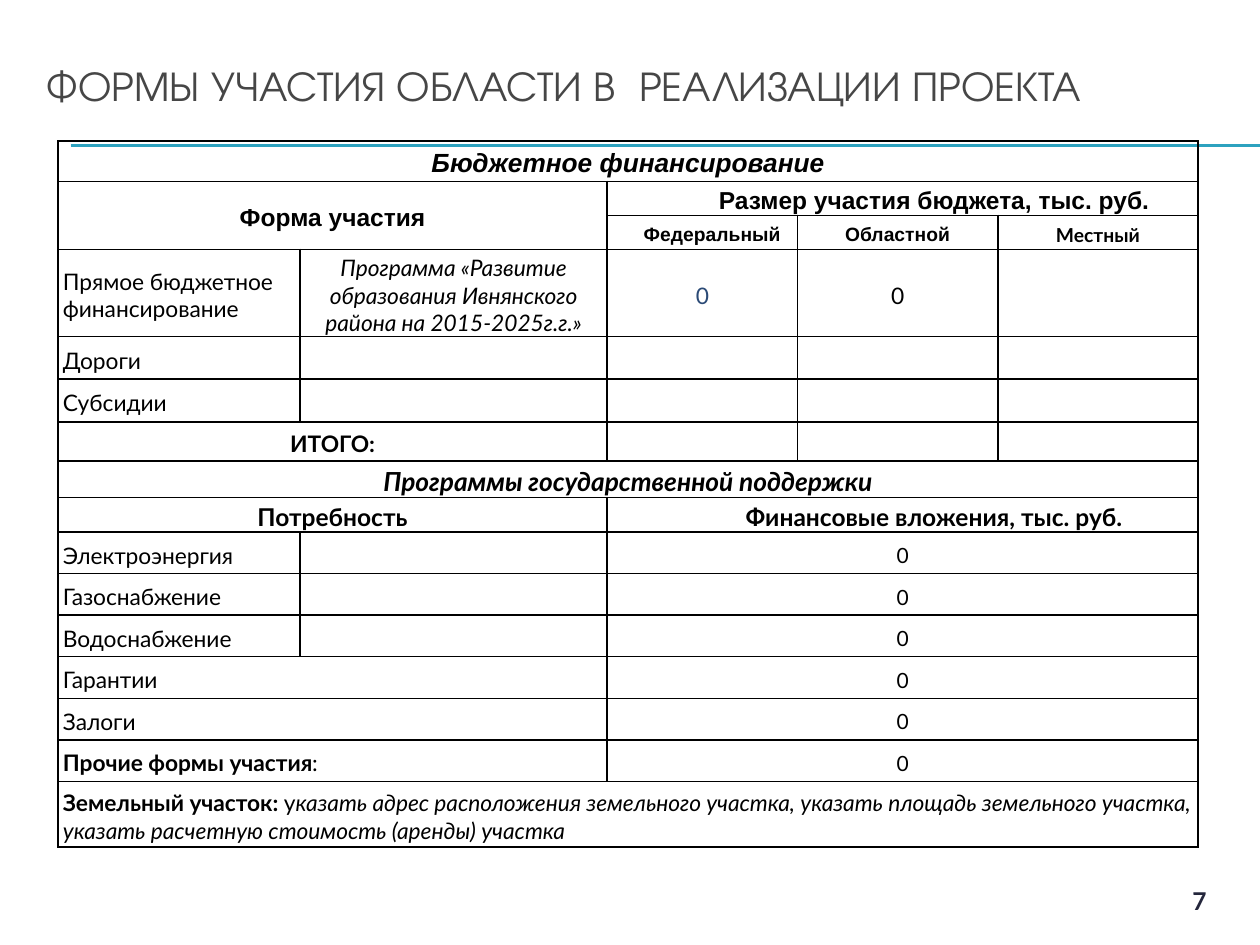
"""Build the slide on the forms of regional participation in the project."""
from lxml.etree import SubElement
from pptx import Presentation
from pptx.dml.color import RGBColor
from pptx.enum.shapes import MSO_CONNECTOR
from pptx.enum.text import MSO_ANCHOR, MSO_AUTO_SIZE, PP_ALIGN
from pptx.oxml import parse_xml
from pptx.oxml.ns import nsdecls, qn
from pptx.util import Inches, Pt

THEME = {
    "ink": "000000", "title": "464646", "rule": "2DA2BF", "federal": "2B4A76", "number": "24263C",
    "title_font": "TeX Gyre Adventor", "heading_font": "Arial", "body_font": "Lato",
    "title_size": 24, "section_size": 15, "heading_size": 14, "body_size": 13,
    "value_size": 12, "level_size": 11,
}
BODY = {"size": THEME["body_size"], "name": THEME["body_font"], "color": THEME["ink"],
        "bold": False, "italic": False}
BOLD = BODY | {"bold": True}
ITALIC = BODY | {"italic": True}
VALUE = BODY | {"size": THEME["value_size"]}
SECTION = BOLD | {"size": THEME["section_size"], "italic": True}
HEADING = BOLD | {"size": THEME["heading_size"]}
LEVEL = BOLD | {"size": THEME["level_size"]}
ARIAL = {"name": THEME["heading_font"]}
LEFT, CENTER = PP_ALIGN.LEFT, PP_ALIGN.CENTER


def write(paragraph, pieces, align=LEFT, indent=0):
    paragraph.alignment = align
    if indent:
        paragraph._p.get_or_add_pPr().set("marL", str(Inches(indent)))
    for text, style in pieces:
        run = paragraph.add_run()
        run.text = text
        run.font.color.rgb = RGBColor.from_string(style["color"])
        run.font.size = Pt(style["size"])
        for attribute in ("name", "bold", "italic"):
            setattr(run.font, attribute, style[attribute])


deck = Presentation()
deck.slide_width, deck.slide_height = Inches(10), Inches(7.5)
slide = deck.slides.add_slide(deck.slide_layouts[5])

title = slide.shapes.title
title_place = {"left": 0.27, "top": 0.21, "width": 9.5, "height": 0.92}
for attribute, length in title_place.items():
    setattr(title, attribute, Inches(length))
title_format = {"vertical_anchor": MSO_ANCHOR.MIDDLE, "auto_size": MSO_AUTO_SIZE.NONE, "word_wrap": True}
for attribute, value in title_format.items():
    setattr(title.text_frame, attribute, value)
title_style = BODY | {"size": THEME["title_size"], "name": THEME["title_font"], "color": THEME["title"]}
write(title.text_frame.paragraphs[0], [("ФОРМЫ УЧАСТИЯ ОБЛАСТИ В  РЕАЛИЗАЦИИ ПРОЕКТА", title_style)])

for y in (1.15, 1.16):
    rule = slide.shapes.add_connector(MSO_CONNECTOR.STRAIGHT, Inches(0.56), Inches(y), Inches(10), Inches(y))
    rule.line.color.rgb = RGBColor.from_string(THEME["rule"])
    rule.line.width = Pt(0.75)
    SubElement(rule._element.spPr, qn("a:effectLst"))

column_widths = [1.92, 2.44, 1.51, 1.59, 1.59]
row_heights = [0.32, 0.27, 0.27, 0.69, 0.34, 0.34, 0.31, 0.29, 0.27] + [0.33] * 6 + [0.52]
funding = slide.shapes.add_table(
    len(row_heights), len(column_widths), Inches(0.46), Inches(1.12),
    Inches(sum(column_widths)), Inches(sum(row_heights))).table
funding.first_row = funding.horz_banding = False
for column, width in zip(funding.columns, column_widths):
    column.width = Inches(width)
for row, height in zip(funding.rows, row_heights):
    row.height = Inches(height)

spans = [(0, 0, 0, 4), (1, 0, 2, 1), (1, 2, 1, 4), (6, 0, 6, 1), (7, 0, 7, 4), (8, 0, 8, 1), (15, 0, 15, 4)]
spans += [(row, 2, row, 4) for row in range(8, 15)]
spans += [(row, 0, row, 1) for row in range(12, 15)]
for top, left, bottom, right in spans:
    funding.cell(top, left).merge(funding.cell(bottom, right))

entries = {
    (0, 0): ([("Бюджетное финансирование", SECTION | ARIAL)], CENTER),
    (1, 0): ([("Форма участия", HEADING | ARIAL)], CENTER),
    (1, 2): ([("Размер участия бюджета, тыс. руб.", HEADING | ARIAL)], CENTER, 0.5),
    (2, 2): ([("Федеральный", LEVEL | ARIAL)], LEFT, 0.25),
    (2, 3): ([("Областной", LEVEL | ARIAL)], CENTER),
    (2, 4): ([("Местный", LEVEL)], CENTER),
    (3, 1): ([("Программа «Развитие образования Ивнянского района на 2015-2025г.г.»", ITALIC)], CENTER),
    (3, 2): ([("0", BODY | {"color": THEME["federal"]})], CENTER),
    (3, 3): ([("0", BODY)], CENTER),
    (6, 0): ([("ИТОГО:", BOLD)], CENTER),
    (7, 0): ([("Программы государственной поддержки", SECTION)], CENTER),
    (8, 0): ([("Потребность", HEADING)], CENTER),
    (8, 2): ([("Финансовые вложения, тыс. руб.", HEADING)], CENTER, 0.5),
    (14, 0): ([("Прочие формы участия", BOLD), (":", BODY)],),
    (15, 0): ([("Земельный участок: ", BOLD), ("у", BODY),
               ("казать адрес расположения земельного участка, указать площадь земельного участка, "
                "указать расчетную стоимость (аренды) участка", ITALIC)],),
}
row_labels = {3: "Прямое бюджетное финансирование", 4: "Дороги", 5: "Субсидии", 9: "Электроэнергия",
              10: "Газоснабжение", 11: "Водоснабжение", 12: "Гарантии", 13: "Залоги"}
entries |= {(row, 0): ([(label, BODY)],) for row, label in row_labels.items()}
entries |= {(row, 2): ([("0", VALUE)], CENTER) for row in range(9, 15)}

cell_format = {"vertical_anchor": MSO_ANCHOR.MIDDLE, "margin_left": Inches(0.04),
               "margin_right": Inches(0.04), "margin_top": Inches(0.04), "margin_bottom": 0}
for row in range(len(row_heights)):
    for column in range(len(column_widths)):
        cell = funding.cell(row, column)
        for attribute, value in cell_format.items():
            setattr(cell, attribute, value)
        cell.fill.background()
        for position, side in enumerate("LRTB"):
            border = parse_xml(
                f'<a:ln{side} {nsdecls("a")} w="{Pt(1)}"><a:solidFill>'
                f'<a:srgbClr val="{THEME["ink"]}"/></a:solidFill></a:ln{side}>')
            cell._tc.get_or_add_tcPr().insert(position, border)
        paragraph = cell.text_frame.paragraphs[0]
        if (row, column) in entries:
            write(paragraph, *entries[row, column])
        else:
            SubElement(paragraph._p, qn("a:endParaRPr"), sz=str(THEME["level_size"] * 100))

page_number = slide.shapes.add_textbox(Inches(9.25), Inches(6.98), Inches(0.54), Inches(0.31))
page_number.text_frame.word_wrap = True
write(page_number.text_frame.paragraphs[0], [("7", HEADING | {"color": THEME["number"]})], CENTER)

deck.save("out.pptx")
